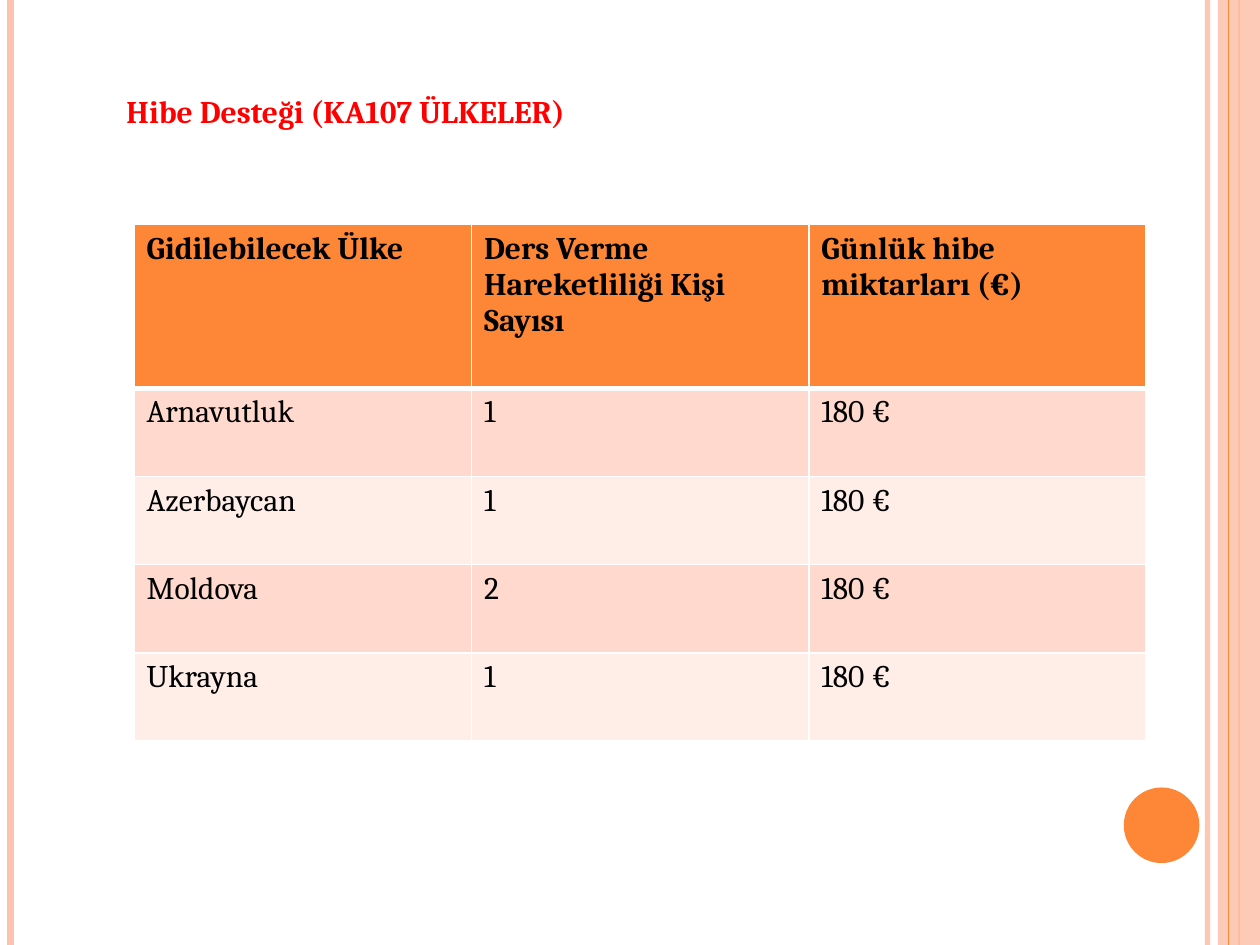
import pptx
import pptx.util
import pptx.dml.color
import pptx.enum.shapes
import pptx.oxml.ns
import lxml.etree

Pt = pptx.util.Pt
Kind = pptx.enum.shapes.MSO_SHAPE
qn = pptx.oxml.ns.qn


def tint(code):
    return pptx.dml.color.RGBColor.from_string(code)


def put(item, form):
    for name, value in form.items():
        setattr(item, name, value)


def add(node, tag, **attrs):
    return lxml.etree.SubElement(node, qn(tag), attrs)


def fade(item, alpha):
    for color in item._element.spPr.iter(qn("a:srgbClr")):
        add(color, "a:alpha", val=str(alpha * 1000))


class Page:
    font = {"name": "Cambria", "size": Pt(18)}
    flat = {"margin_left": Pt(7.2), "margin_right": Pt(7.2),
            "margin_top": Pt(3.6), "margin_bottom": Pt(3.6)}
    accent = "FE8637"
    pale = "FEC3AE"
    bands = ("FFD9CE", "FFEDE8")

    def __init__(self, deck):
        self.tall = deck.slide_height
        self.slide = deck.slides.add_slide(deck.slide_layouts[6])
        self.shapes = self.slide.shapes

    def text(self, frame, words, color, bold):
        run = frame.paragraphs[0].add_run()
        run.text = words
        put(run.font, {**self.font, "bold": bold})
        run.font.color.rgb = tint(color)

    def rule(self, x, width, color, alpha=100):
        line = self.shapes.add_connector(
            pptx.enum.shapes.MSO_CONNECTOR.STRAIGHT, Pt(x), 0, Pt(x), self.tall)
        line.line.width = Pt(width)
        line.line.color.rgb = tint(color)
        add(line._element.spPr, "a:effectLst")
        if alpha < 100:
            fade(line, alpha)

    def shape(self, kind, x, y, w, h, color, alpha=100):
        shape = self.shapes.add_shape(kind, Pt(x), Pt(y), Pt(w), Pt(h))
        shape.shadow.inherit = False
        shape.fill.solid()
        shape.fill.fore_color.rgb = tint(color)
        shape.line.fill.background()
        if alpha < 100:
            fade(shape, alpha)

    def label(self, x, y, w, h, words, color):
        box = self.shapes.add_textbox(Pt(x), Pt(y), Pt(w), Pt(h))
        put(box.text_frame, {**self.flat, "word_wrap": False})
        self.text(box.text_frame, words, color, True)

    def edge(self, cell, head):
        props = cell._tc.get_or_add_tcPr()
        for side in "LRTB":
            width = 3 if head and side == "B" else 1
            line = add(props, f"a:ln{side}", w=str(Pt(width)))
            add(add(line, "a:solidFill"), "a:srgbClr", val="FFFFFF")

    def table(self, x, y, w, rows, first, rest):
        high = first + rest * (len(rows) - 1)
        grid = self.shapes.add_table(
            len(rows), len(rows[0]), Pt(x), Pt(y), Pt(w), Pt(high)).table
        for r, row in enumerate(rows):
            head = r == 0
            grid.rows[r].height = Pt(first if head else rest)
            for c, words in enumerate(row):
                cell = grid.cell(r, c)
                put(cell, self.flat)
                self.edge(cell, head)
                cell.fill.solid()
                color = self.accent if head else self.bands[(r - 1) % 2]
                cell.fill.fore_color.rgb = tint(color)
                self.text(cell.text_frame, words, "000000", head)


def main():
    deck = pptx.Presentation()
    put(deck, {"slide_width": Pt(720), "slide_height": Pt(540)})
    page = Page(deck)

    page.rule(690, 3, page.pale, 93)
    page.rule(6, 4.5, page.pale)
    page.rule(708, 1.5, page.accent)
    page.shape(Kind.RECTANGLE, 696, 0, 24, 540, page.pale, 87)
    page.rule(702, 0.75, page.accent)
    page.shape(Kind.OVAL, 642.2, 450, 43.2, 43.2, page.accent)

    page.label(65.2, 49.2, 323.3, 29,
               "Hibe Desteği (KA107 ÜLKELER)", "FF0000")
    lands = {"Arnavutluk": 1, "Azerbaycan": 1, "Moldova": 2, "Ukrayna": 1}
    rows = [("Gidilebilecek Ülke", "Ders Verme Hareketliliği Kişi Sayısı",
             "Günlük hibe miktarları (€)")]
    rows += [(land, str(count), "180 €") for land, count in lands.items()]
    page.table(76.6, 128.3, 578.4, rows, 93.6, 50.4)

    deck.save("out.pptx")


if __name__ == "__main__":
    main()
